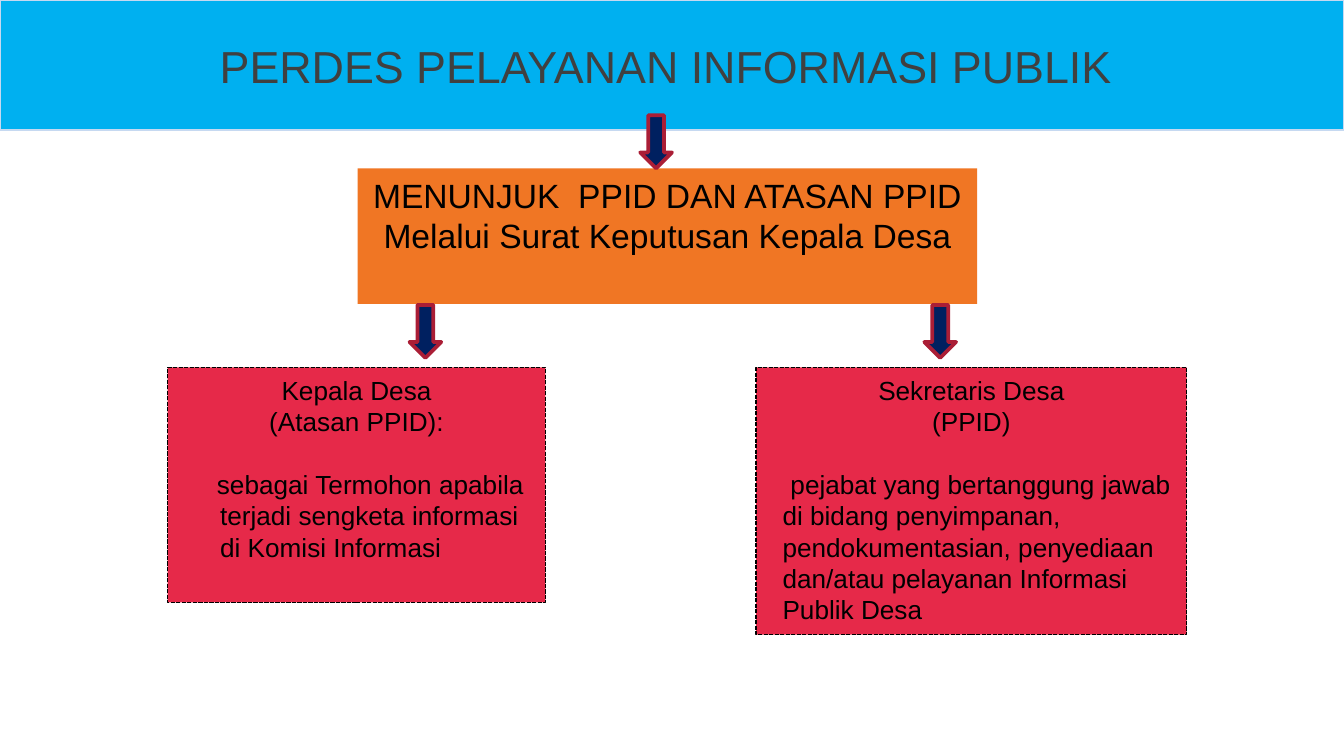
from pptx import Presentation
from pptx.dml.color import RGBColor
from pptx.enum.dml import MSO_LINE
from pptx.enum.shapes import MSO_SHAPE
from pptx.enum.text import MSO_ANCHOR, PP_ALIGN
from pptx.util import Cm, Pt

BLUE = RGBColor(0x00, 0xB0, 0xF0)
PALE = RGBColor(0xC6, 0xD9, 0xF1)
ORANGE = RGBColor(0xF0, 0x76, 0x24)
RED = RGBColor(0xE6, 0x29, 0x49)
NAVY = RGBColor(0x00, 0x20, 0x60)
WINE = RGBColor(0xAA, 0x1E, 0x36)
GREY = RGBColor(0x40, 0x40, 0x40)
BLACK = RGBColor(0, 0, 0)

deck = Presentation()
deck.slide_width, deck.slide_height = Cm(25.4), Cm(14.28)
slide = deck.slides.add_slide(deck.slide_layouts[6])


def add_box(kind, left, top, width, height, fill, edge=None, weight=0.75):
    box = slide.shapes.add_shape(kind, Cm(left), Cm(top), Cm(width), Cm(height))
    box.shadow.inherit = False
    box.fill.solid()
    box.fill.fore_color.rgb = fill
    if edge is None:
        box.line.fill.background()
    else:
        box.line.color.rgb = edge
        box.line.width = Pt(weight)
    return box


def add_text(box, lines, size, color, anchor=MSO_ANCHOR.TOP):
    frame = box.text_frame
    frame.word_wrap = True
    frame.vertical_anchor = anchor
    frame.text = "\n".join(lines)
    for para in frame.paragraphs:
        para.alignment = PP_ALIGN.CENTER
        font = para.runs[0].font
        font.name, font.size, font.color.rgb = "Arial", Pt(size), color
    return frame.paragraphs


# Title band
band = add_box(MSO_SHAPE.RECTANGLE, 0, 0, 25.4, 2.46, BLUE, PALE)
add_text(band, ["PERDES PELAYANAN INFORMASI PUBLIK "], 24, GREY, MSO_ANCHOR.MIDDLE)

# Appointment box
task = add_box(MSO_SHAPE.RECTANGLE, 6.76, 3.18, 11.71, 2.56, ORANGE)
add_text(task, ["MENUNJUK  PPID DAN ATASAN PPID ",
                "Melalui Surat Keputusan Kepala Desa"], 18, BLACK)

# Role boxes: left, width, height, margin, first indent, heading, body
roles = [
    (3.17, 7.14, 4.44, 0.74, -0.06,
     ["Kepala Desa", "(Atasan PPID):"],
     ["sebagai Termohon apabila terjadi sengketa informasi di Komisi Informasi"]),
    (14.29, 8.14, 5.05, 0.25, 0.15,
     ["Sekretaris Desa", "(PPID)"],
     ["pejabat yang bertanggung jawab", "di bidang penyimpanan,",
      "pendokumentasian, penyediaan dan/atau pelayanan Informasi",
      "Publik Desa"]),
]
for left, width, height, margin, indent, head, body in roles:
    role = add_box(MSO_SHAPE.RECTANGLE, left, 6.94, width, height, RED, BLACK)
    role.line.dash_style = MSO_LINE.SQUARE_DOT
    paras = add_text(role, head + body, 14, BLACK)[len(head):]
    for para in paras:
        para.alignment = PP_ALIGN.LEFT
        para._p.get_or_add_pPr().set("marL", str(Cm(margin)))
    paras[0].space_before = Pt(16.8)
    paras[0]._p.get_or_add_pPr().set("indent", str(Cm(indent)))

# Arrows between the levels
for left, top in [(12.1, 2.18), (17.47, 5.76), (7.74, 5.76)]:
    add_box(MSO_SHAPE.DOWN_ARROW, left, top, 0.6, 1, NAVY, WINE, 2)

deck.save("out.pptx")
